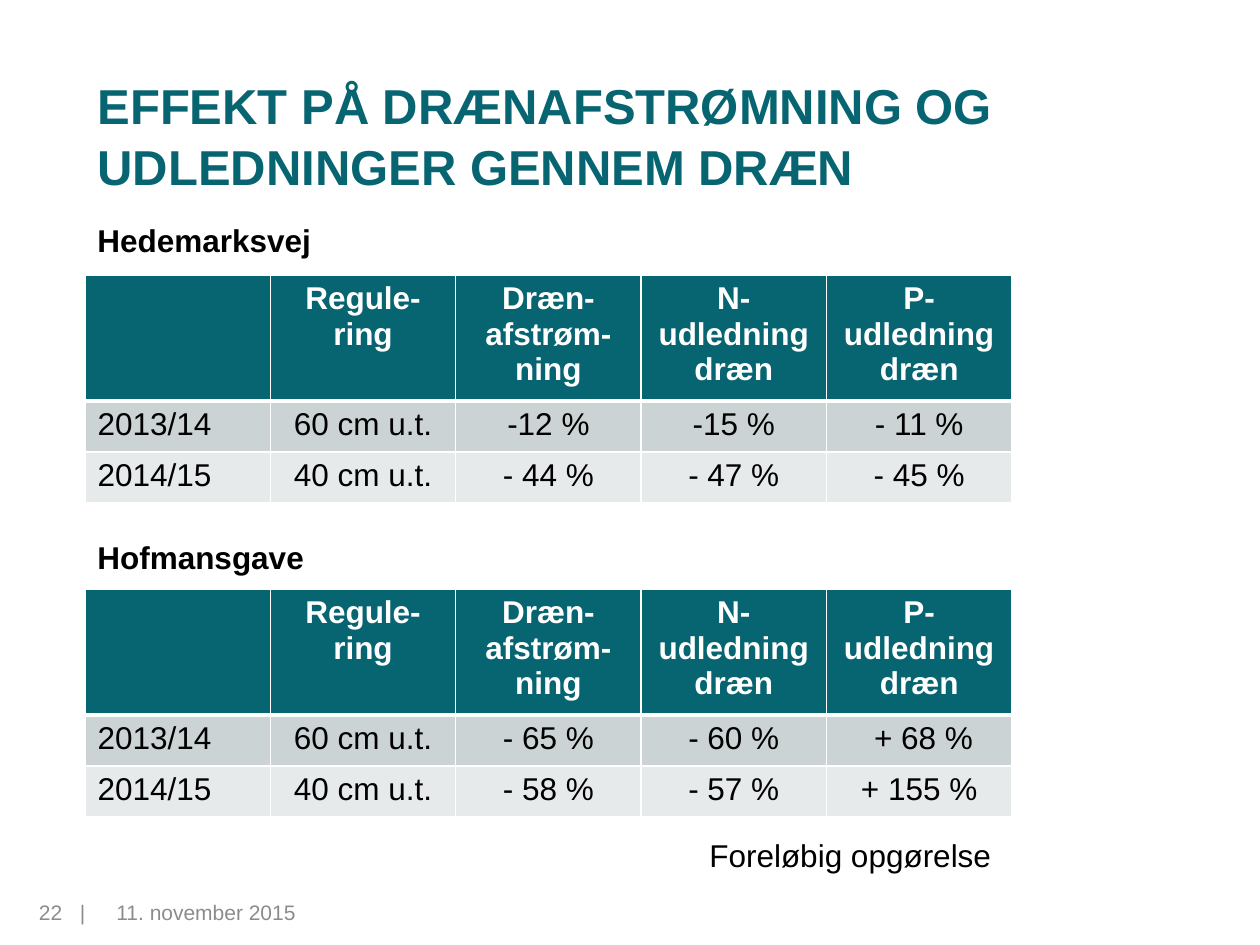
from lxml.etree import SubElement
from pptx import Presentation
from pptx.dml.color import RGBColor
from pptx.enum.text import MSO_ANCHOR as Anchor, PP_ALIGN as Align
from pptx.oxml.ns import qn
from pptx.util import Pt

PX = 914400 // 126
TEAL, GREY, BLACK, WHITE = "076471", "8C8C8C", "000000", "FFFFFF"
ROW_FILLS = [TEAL, "CCD3D5", "E7EAEB"]

TITLE = "EFFEKT PÅ DRÆNAFSTRØMNING OG UDLEDNINGER GENNEM DRÆN"
HEADER = ["", "Regule-ring", "Dræn-afstrøm-ning", "N-udledning dræn", "P-udledning dræn"]
# site, label top, table top, header height, rows
SITES = [
    ("Hedemarksvej", 215, 275, 117, [
        ["2013/14", "60 cm u.t.", "-12 %", "-15 %", "- 11 %"],
        ["2014/15", "40 cm u.t.", "- 44 %", "- 47 %", "- 45 %"],
    ]),
    ("Hofmansgave", 532, 589, 125, [
        ["2013/14", "60 cm u.t.", "- 65 %", "- 60 %", " + 68 %"],
        ["2014/15", "40 cm u.t.", "- 58 %", "- 57 %", "+ 155 %"],
    ]),
]
LEFT, TABLE_WIDTH, ROW_HEIGHT = 85, 927, 51


def px(value):
    return value * PX


def color(value):
    return RGBColor.from_string(value)


def style(paragraph, size, hex_color, bold=False):
    font = paragraph.font
    font.name, font.size, font.bold = "Arial", Pt(size), bold
    font.color.rgb = color(hex_color)


def add_text(slide, text, left, top, width, size=18, hex_color=BLACK, bold=False):
    box = slide.shapes.add_textbox(px(left), px(top), px(width), px(50))
    box.text_frame.word_wrap = True
    paragraph = box.text_frame.paragraphs[0]
    paragraph.text = text
    style(paragraph, size, hex_color, bold)
    return box


def add_borders(cell, top, bottom):
    properties = cell._tc.get_or_add_tcPr()
    for side, width in (("L", 1), ("R", 1), ("T", top), ("B", bottom)):
        line = SubElement(properties, qn(f"a:ln{side}"), w=str(Pt(width)))
        fill = SubElement(line, qn("a:solidFill"))
        SubElement(fill, qn("a:srgbClr"), val=WHITE)


def add_site_table(slide, top, header_height, rows):
    rows = [HEADER] + rows
    heights = [header_height] + [ROW_HEIGHT] * (len(rows) - 1)
    table = slide.shapes.add_table(len(rows), len(HEADER), px(LEFT), px(top),
                                   px(TABLE_WIDTH), px(sum(heights))).table
    for row, height in zip(table.rows, heights):
        row.height = px(height)
    for r, values in enumerate(rows):
        is_header = r == 0
        for c, value in enumerate(values):
            cell = table.cell(r, c)
            add_borders(cell, 3 if r == 1 else 1, 3 if is_header else 1)
            cell.fill.solid()
            cell.fill.fore_color.rgb = color(ROW_FILLS[r])
            paragraph = cell.text_frame.paragraphs[0]
            paragraph.text = value
            paragraph.alignment = Align.CENTER if c else Align.LEFT
            style(paragraph, 18, WHITE if is_header else BLACK, is_header)


def main():
    presentation = Presentation()
    presentation.slide_width, presentation.slide_height = px(1260), px(945)
    slide = presentation.slides.add_slide(presentation.slide_layouts[5])

    title = slide.shapes.title
    title.left, title.top, title.width, title.height = px(LEFT), px(55), px(1113), px(158)
    title.text_frame.text = TITLE
    title.text_frame.vertical_anchor = Anchor.MIDDLE
    paragraph = title.text_frame.paragraphs[0]
    paragraph.alignment = Align.LEFT
    paragraph.line_spacing = 1.05
    style(paragraph, 28, TEAL, True)

    for site, label_top, table_top, header_height, rows in SITES:
        add_text(slide, site, LEFT, label_top, 260, bold=True)
        add_site_table(slide, table_top, header_height, rows)
    add_text(slide, "Foreløbig opgørelse", 697, 830, 320)

    add_text(slide, "11. november 2015", 104, 893, 294, 12, GREY)
    number = add_text(slide, "", 0, 893, 98, 12, GREY)
    number.text_frame.margin_left = px(39)
    paragraph = number.text_frame.paragraphs[0]
    paragraph.text = "22\t|"
    tabs = paragraph._p.get_or_add_pPr()
    tab_list = SubElement(tabs, qn("a:tabLst"))
    tabs.insert(0, tab_list)
    SubElement(tab_list, qn("a:tab"), pos=str(px(41)), algn="l")

    presentation.save("out.pptx")


if __name__ == "__main__":
    main()
